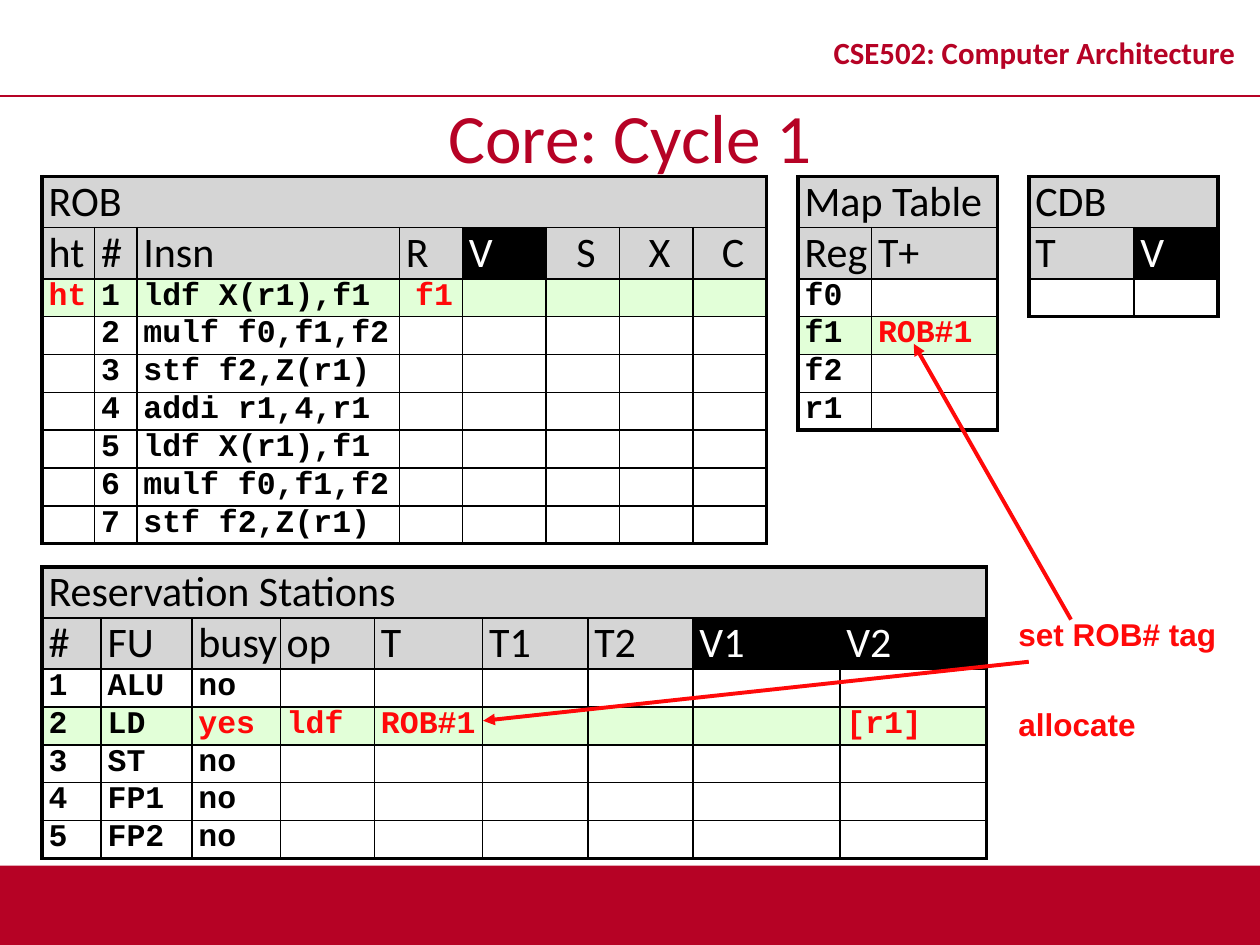
from dataclasses import dataclass

from lxml.etree import SubElement
from pptx import Presentation
from pptx.dml.color import RGBColor as RGB
from pptx.enum.shapes import MSO_CONNECTOR as CONN, MSO_SHAPE as SHAPE
from pptx.enum.text import MSO_ANCHOR as ANCHOR, MSO_AUTO_SIZE as AUTO, PP_ALIGN as ALIGN
from pptx.oxml.ns import qn
from pptx.util import Cm, Pt


@dataclass(frozen=True)
class Theme:
    brand: RGB = RGB(0xB6, 0x02, 0x25)
    mark: RGB = RGB(0xFF, 0x09, 0x09)
    ink: RGB = RGB(0, 0, 0)
    paper: RGB = RGB(255, 255, 255)
    head: RGB = RGB(0xD5, 0xD5, 0xD5)
    active: RGB = RGB(0xE2, 0xFF, 0xD8)
    sans: str = "Calibri"
    code: str = "Courier New"
    note: str = "Arial"
    title_size: float = 39.6
    course_size: float = 17.6
    head_size: float = 24
    body_size: float = 18
    thin: float = 1
    thick: float = 2.25


T = Theme()
HEAD_HEIGHT, BODY_HEIGHT = 1.03, 0.72
LABEL_COLUMNS = {"#", "Insn", "Reg", "FU"}
CENTRED = {"S", "X", "C", "f1"}

ROB_COLUMNS = {"ht": 1.06, "#": 0.85, "Insn": 5.29, "R": 1.27, "V": 1.69,
               "S": 1.48, "X": 1.48, "C": 1.48}
ROB_ROWS = [
    ["ht", "1", "ldf X(r1),f1", "f1"],
    ["", "2", "mulf f0,f1,f2"],
    ["", "3", "stf f2,Z(r1)"],
    ["", "4", "addi r1,4,r1"],
    ["", "5", "ldf X(r1),f1"],
    ["", "6", "mulf f0,f1,f2"],
    ["", "7", "stf f2,Z(r1)"],
]
MAP_COLUMNS = {"Reg": 1.48, "T+": 2.54}
MAP_ROWS = [["f0"], ["f1", "ROB#1"], ["f2"], ["r1"]]
STATION_COLUMNS = {"#": 1.19, "FU": 1.83, "busy": 1.78, "op": 1.9, "T": 2.18,
                   "T1": 2.12, "T2": 2.12, "V1": 2.96, "V2": 2.96}
STATION_ROWS = [
    ["1", "ALU", "no"],
    ["2", "LD", "yes", "ldf", "ROB#1", "", "", "", "[r1]"],
    ["3", "ST", "no"],
    ["4", "FP1", "no"],
    ["5", "FP2", "no"],
]
CDB_COLUMNS = {"T": 2.12, "V": 1.69}


def style(p, font, size, color, bold=False, align=ALIGN.LEFT):
    p.alignment = align
    p.font.name, p.font.size, p.font.bold = font, Pt(size), bold
    p.font.color.rgb = color


def add_line(s, start, end, color, width, arrow=False):
    line = s.shapes.add_connector(CONN.STRAIGHT, *map(Cm, start + end))
    line.line.color.rgb, line.line.width = color, Pt(width)
    if arrow:
        SubElement(line.line._get_or_add_ln(), qn("a:tailEnd"), type="triangle")
    SubElement(line._element.spPr, qn("a:effectLst"))


def add_text(s, box, text, font, size, color, align=ALIGN.LEFT, wrap=False):
    tf = s.shapes.add_textbox(*map(Cm, box)).text_frame
    tf.word_wrap = wrap
    p = tf.paragraphs[0]
    p.text = text
    style(p, font, size, color, True, align)
    return tf


def set_borders(cell, **widths):
    tc_pr = cell._tc.get_or_add_tcPr()
    for side in "LRTB":
        ln = SubElement(tc_pr, qn(f"a:ln{side}"), w=str(Pt(widths[side])))
        fill = SubElement(ln, qn("a:solidFill"))
        SubElement(fill, qn("a:srgbClr"), val=str(T.ink))


def fill_cell(cell, text, fill, font, size, color, bold=False):
    cell.margin_left = Cm(0.13)
    cell.margin_right = cell.margin_top = cell.margin_bottom = 0
    cell.fill.solid()
    cell.fill.fore_color.rgb = fill
    p = cell.text_frame.paragraphs[0]
    p.text = text
    style(p, font, size, color, bold, ALIGN.CENTER if text in CENTRED and fill != T.paper
          and color != T.ink or text in {"S", "X", "C"} else ALIGN.LEFT)


def add_state_table(s, left, top, title, columns, rows, active=None):
    names, count = list(columns), len(rows) + 2
    heights = [HEAD_HEIGHT] * 2 + [BODY_HEIGHT] * len(rows)
    table = s.shapes.add_table(count, len(names), Cm(left), Cm(top),
                               Cm(sum(columns.values())), Cm(sum(heights))).table
    table.first_row = table.horz_banding = False
    for col, width in zip(table.columns, columns.values()):
        col.width = Cm(width)
    for row, height in zip(table.rows, heights):
        row.height = Cm(height)
    table.cell(0, 0).merge(table.cell(0, len(names) - 1))
    for i in range(count):
        for j, name in enumerate(names):
            cell = table.cell(i, j)
            outer = {"L": j == 0 or i == 0, "R": j == len(names) - 1 or i == 0,
                     "T": i == 0, "B": i == count - 1}
            set_borders(cell, **{k: T.thick if v else T.thin for k, v in outer.items()})
            if i < 2:
                dark = i == 1 and name.startswith("V")
                text = name if i else title if j == 0 else ""
                fill_cell(cell, text, T.ink if dark else T.head, T.sans, T.head_size,
                          T.paper if dark else T.ink)
            else:
                values, is_active = rows[i - 2], i - 2 == active
                text = values[j] if j < len(values) else ""
                marked = is_active and name not in LABEL_COLUMNS
                fill_cell(cell, text, T.active if is_active else T.paper, T.code,
                          T.body_size, T.mark if marked else T.ink, True)


def add_frame(s):
    band = s.shapes.add_shape(SHAPE.RECTANGLE, 0, Cm(17.45), Cm(25.4), Cm(1.6))
    band.shadow.inherit = False
    band.fill.solid()
    band.fill.fore_color.rgb = T.brand
    band.line.fill.background()
    add_line(s, (0, 1.93), (25.4, 1.93), T.brand, T.thin)
    tf = add_text(s, (16.31, 0.33, 9.09, 1.6), "CSE502: Computer Architecture",
                  T.sans, T.course_size, T.brand, ALIGN.CENTER, True)
    tf.vertical_anchor = ANCHOR.MIDDLE
    tf.paragraphs[0].line_spacing = 0.8


def set_title(s, text):
    sp = s.shapes.title
    sp.left, sp.top, sp.width, sp.height = map(Cm, (0, 1.93, 25.4, 1.6))
    tf = sp.text_frame
    tf.text = text
    tf.auto_size, tf.vertical_anchor = AUTO.NONE, ANCHOR.MIDDLE
    style(tf.paragraphs[0], T.sans, T.title_size, T.brand, align=ALIGN.CENTER)


def main():
    prs = Presentation()
    prs.slide_width, prs.slide_height = Cm(25.4), Cm(19.05)
    s = prs.slides.add_slide(prs.slide_layouts[5])
    add_frame(s)
    set_title(s, "Core: Cycle 1")

    add_state_table(s, 0.85, 3.56, "ROB", ROB_COLUMNS, ROB_ROWS, 0)
    add_state_table(s, 16.09, 3.56, "Map Table", MAP_COLUMNS, MAP_ROWS, 1)
    add_state_table(s, 0.85, 11.43, "Reservation Stations", STATION_COLUMNS, STATION_ROWS, 1)
    add_state_table(s, 20.74, 3.56, "CDB", CDB_COLUMNS, [[]])

    for top, width, text in ((14.08, 2.87, "allocate"), (12.28, 4.5, "set ROB# tag")):
        add_text(s, (20.28, top, width, 1.03), text, T.note, T.body_size, T.mark)
    for start, end in (((21.59, 12.49), (18.42, 6.93)), ((20.74, 13.34), (9.74, 14.53))):
        add_line(s, start, end, T.mark, T.thick, arrow=True)

    prs.save("out.pptx")


if __name__ == "__main__":
    main()
